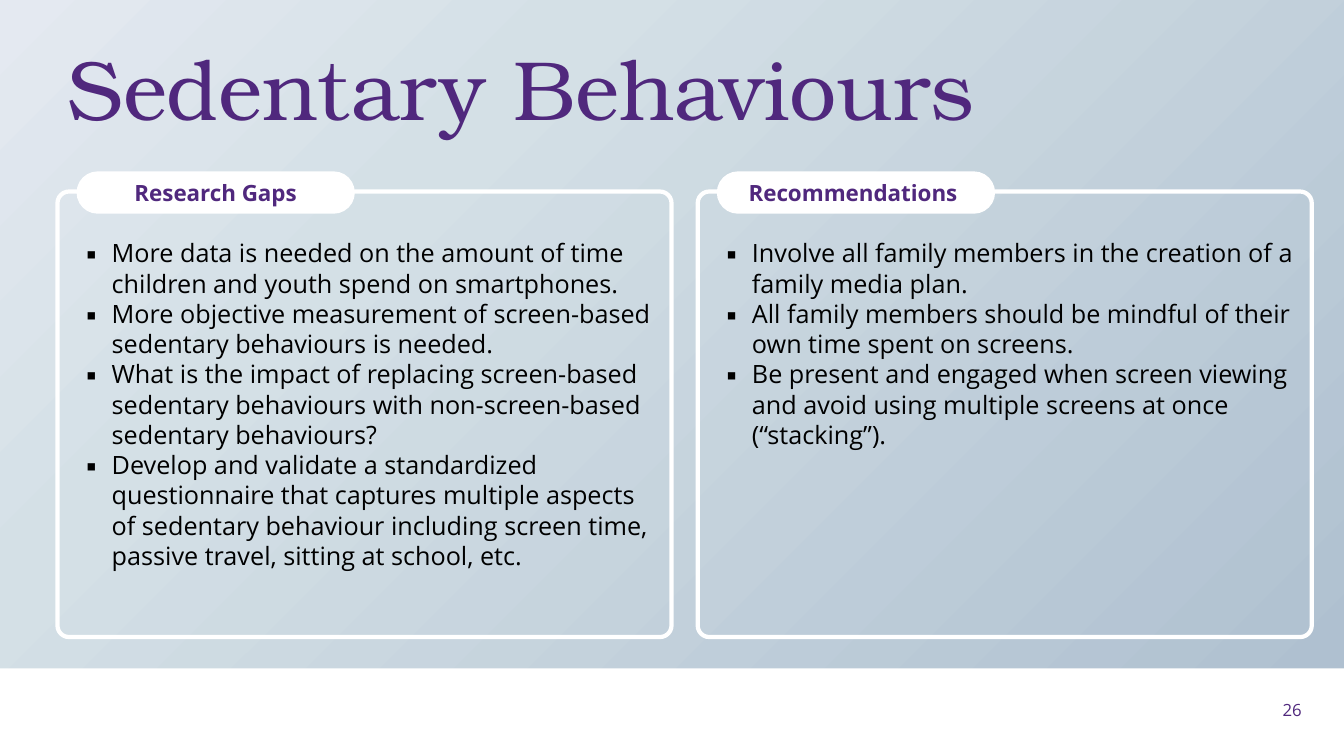
"""Build the slide on sedentary behaviours: research gaps and recommendations."""
from lxml import etree
from pptx import Presentation
from pptx.dml.color import RGBColor
from pptx.enum.shapes import MSO_SHAPE
from pptx.enum.text import MSO_ANCHOR, PP_ALIGN
from pptx.oxml import parse_xml
from pptx.oxml.ns import qn
from pptx.util import Inches, Pt

TITLE = "Sedentary Behaviours"
PAGE = "26"
PANELS = [
    ("Research Gaps", [
        "More data is needed on the amount of time children and youth spend on smartphones.",
        "More objective measurement of screen-based sedentary behaviours is needed.",
        "What is the impact of replacing screen-based sedentary behaviours with "
        "non-screen-based sedentary behaviours?",
        "Develop and validate a standardized questionnaire that captures multiple aspects "
        "of sedentary behaviour including screen time, passive travel, sitting at school, etc.",
    ]),
    ("Recommendations ", [
        "Involve all family members in the creation of a family media plan.",
        "All family members should be mindful of their own time spent on screens.",
        "Be present and engaged when screen viewing and avoid using multiple screens "
        "at once (“stacking”).",
    ]),
]

PURPLE = RGBColor(0x50, 0x28, 0x7D)
WHITE = RGBColor(255, 255, 255)
BLACK = RGBColor(0, 0, 0)
STOPS = [
    (0, RGBColor(0xE4, 0xE9, 0xF1)),
    (30, RGBColor(0xD4, 0xE0, 0xE6)),
    (100, RGBColor(0xAF, 0xC0, 0xD0)),
]
SANS, SERIF = "Open Sans", "TeX Gyre Bonum"
RECT, ROUND = MSO_SHAPE.RECTANGLE, MSO_SHAPE.ROUNDED_RECTANGLE
LEFT, MID, RIGHT = PP_ALIGN.LEFT, PP_ALIGN.CENTER, PP_ALIGN.RIGHT
TOP, CENTRE = MSO_ANCHOR.TOP, MSO_ANCHOR.MIDDLE

WIDE, HIGH = 13.33, 7.5
BAND = 6.63
EDGE, STEP, PAD = 0.57, 6.35, 0.19
INDENT = Inches(0.25)

deck = Presentation()
deck.slide_width, deck.slide_height = Inches(WIDE), Inches(HIGH)
slide = deck.slides.add_slide(deck.slide_layouts[5])
shapes = slide.shapes


def inch(*nums):
    return [Inches(num) for num in nums]


def draw(kind, box, fill=None, line=None, curve=None):
    item = shapes.add_shape(kind, *inch(*box))
    item.shadow.inherit = False
    if curve is not None:
        item.adjustments[0] = curve
    if fill is None:
        item.fill.background()
    else:
        item.fill.solid()
        item.fill.fore_color.rgb = fill
    if line is None:
        item.line.fill.background()
    else:
        item.line.color.rgb = line
        item.line.width = Pt(3)
    return item


def shade(item):
    stops = "".join(f'<a:gs pos="{pos * 1000}"><a:srgbClr val="{tint}"/></a:gs>'
                    for pos, tint in STOPS)
    grad = parse_xml(
        '<a:gradFill xmlns:a="http://schemas.openxmlformats.org/drawingml/2006/main" '
        f'rotWithShape="1"><a:gsLst>{stops}</a:gsLst>'
        '<a:lin ang="2700000" scaled="0"/></a:gradFill>')
    props = item.element.spPr
    props.replace(props.find(qn("a:solidFill")), grad)


def write(item, lines, size=18, color=BLACK, font=SANS, bold=False,
          align=LEFT, anchor=TOP, space=None, bullet=None):
    frame = item.text_frame
    frame.word_wrap = True
    frame.vertical_anchor = anchor
    for spot, line in enumerate(lines):
        para = frame.add_paragraph() if spot else frame.paragraphs[0]
        para.alignment = align
        if space:
            para.line_spacing = Pt(space)
        if bullet:
            props = para._p.get_or_add_pPr()
            props.set("marL", str(INDENT))
            props.set("indent", str(-INDENT))
            etree.SubElement(props, qn("a:buFont")).set("typeface", SANS)
            etree.SubElement(props, qn("a:buChar")).set("char", bullet)
        run = para.add_run()
        run.text = line
        run.font.name, run.font.size = font, Pt(size)
        run.font.bold, run.font.color.rgb = bold, color


def panel(left, label, points):
    draw(ROUND, (left, 1.9, 6.09, 4.42), line=WHITE, curve=0.026)
    body = shapes.add_textbox(*inch(left + PAD, 2.31, 5.86, 2.96))
    write(body, points, space=21.6, bullet="▪")
    tab = draw(ROUND, (left + PAD, 1.7, 2.76, 0.42), fill=WHITE, curve=0.5)
    write(tab, [label], size=16, color=PURPLE, bold=True, align=MID, anchor=CENTRE)


def main():
    shade(draw(RECT, (0, 0, WIDE, BAND), fill=WHITE))
    draw(RECT, (0, BAND, WIDE, HIGH - BAND), fill=WHITE)

    title = shapes.title
    title.left, title.top, title.width, title.height = inch(EDGE, 0.26, 11.5, 1.45)
    write(title, [TITLE], size=60, color=PURPLE, font=SERIF, anchor=CENTRE, space=55)
    shapes.element.append(title.element)

    for spot, (label, points) in enumerate(PANELS):
        panel(EDGE + spot * STEP, label, points)

    page = shapes.add_textbox(*inch(12.54, 6.84, 0.47, 0.4))
    write(page, [PAGE], size=12, color=PURPLE, align=RIGHT, anchor=CENTRE)
    deck.save("out.pptx")


if __name__ == "__main__":
    main()
